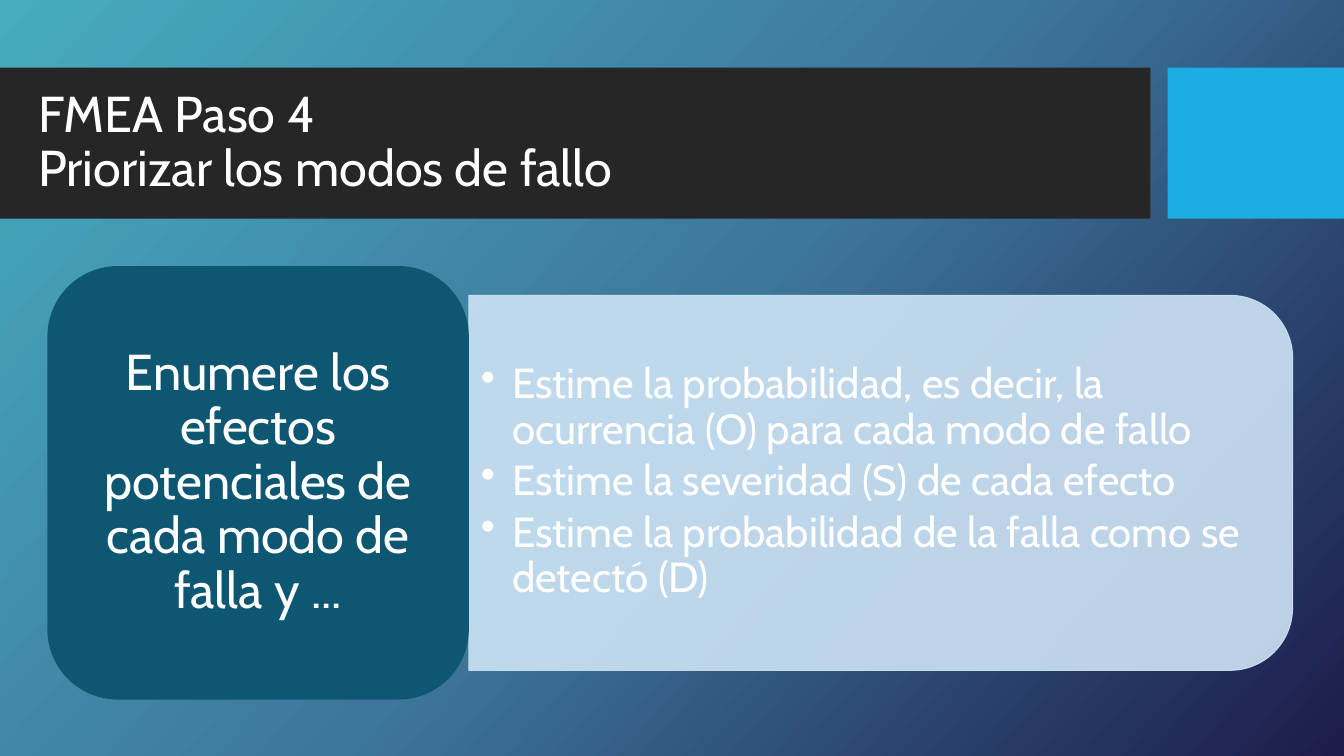
from lxml import etree
from pptx import Presentation
from pptx.dml.color import RGBColor
from pptx.enum.shapes import MSO_SHAPE
from pptx.enum.text import MSO_ANCHOR, MSO_AUTO_SIZE, PP_ALIGN
from pptx.oxml.ns import qn
from pptx.util import Inches, Pt

RECT, ROUND, TAB = MSO_SHAPE.RECTANGLE, MSO_SHAPE.ROUNDED_RECTANGLE, MSO_SHAPE.ROUND_2_SAME_RECTANGLE
LEFT, CENTER = PP_ALIGN.LEFT, PP_ALIGN.CENTER

TITLE = "FMEA Paso 4\vPriorizar los modos de fallo"
LEAD = "Enumere los efectos potenciales de cada modo de falla y ..."
STEPS = [
    "Estime la probabilidad, es decir, la ocurrencia (O) para cada modo de fallo",
    "Estime la severidad (S) de cada efecto",
    "Estime la probabilidad de la falla como se detectó (D)",
]
STOPS = [(0, "46ACBE"), (50, "3E779B"), (100, "1C1C4C")]
ANGLE = 42
WIDE, HIGH = 13.33, 7.5
BAND = (0.67, 1.5)
CARD = (0.47, 2.64, 4.18, 4.3)
PANEL = (CARD[0] + CARD[2], 2.93, 8.17, 3.72)


def color(code):
    return RGBColor.from_string(code)


def place(item, box):
    for name, size in zip(("left", "top", "width", "height"), box):
        setattr(item, name, Inches(size))


def block(kind, box, code):
    shape = slide.shapes.add_shape(kind, *map(Inches, box))
    shape.shadow.inherit = False
    shape.fill.solid()
    shape.fill.fore_color.rgb = color(code)
    shape.line.fill.background()
    return shape


def write(item, lines, size, align, pad, after=0, dots=False):
    frame = item.text_frame
    form = {"word_wrap": True, "auto_size": MSO_AUTO_SIZE.NONE, "vertical_anchor": MSO_ANCHOR.MIDDLE,
            "margin_left": Inches(pad[0]), "margin_right": Inches(pad[0]),
            "margin_top": Inches(pad[1]), "margin_bottom": Inches(pad[1])}
    for name, value in form.items():
        setattr(frame, name, value)
    for i, line in enumerate(lines):
        para = frame.add_paragraph() if i else frame.paragraphs[0]
        para.text = line
        look = {"alignment": align, "line_spacing": 0.9, "space_before": Pt(0), "space_after": Pt(after)}
        for name, value in look.items():
            setattr(para, name, value)
        if dots:
            props = para._p.get_or_add_pPr()
            props.set("marL", str(Inches(0.31)))
            props.set("indent", str(-Inches(0.31)))
            etree.SubElement(props, qn("a:buChar")).set("char", "•")
        for run in para.runs:
            for name, value in {"size": Pt(size), "name": "Cabin"}.items():
                setattr(run.font, name, value)
            run.font.color.rgb = color("FFFFFF")


deck = Presentation()
deck.slide_width, deck.slide_height = Inches(WIDE), Inches(HIGH)
slide = deck.slides.add_slide(deck.slide_layouts[5])

back = slide.background.fill
back.gradient()
back.gradient_angle = 360 - ANGLE
stops = next(slide.element.iter(qn("a:gsLst")))
for old in list(stops):
    stops.remove(old)
for share, code in STOPS:
    stop = etree.SubElement(stops, qn("a:gs"), pos=str(share * 1000))
    etree.SubElement(stop, qn("a:srgbClr"), val=code)

top, tall = BAND
block(RECT, (0, top, 11.41, tall), "262626")
block(RECT, (11.58, top, WIDE - 11.58, tall), "1CADE4")

title = slide.shapes.title
slide.shapes._spTree.append(title._element)
place(title, (0.28, 0.83, 10.51, 1.18))
write(title, [TITLE], 36, LEFT, (0.1, 0.05))

x, y, w, h = PANEL
panel = block(TAB, (x + (w - h) / 2, y + (h - w) / 2, h, w), "CDE3F5")
panel.rotation = 90
panel.line.color.rgb = color("CDE3F5")
panel.line.width = Pt(0.75)
for tint in panel._element.spPr.iter(qn("a:srgbClr")):
    etree.SubElement(tint, qn("a:alpha"), val="90000")

notes = slide.shapes.add_textbox(0, 0, 0, 0)
place(notes, (x, 3.11, 7.98, 3.35))
write(notes, STEPS, 30, LEFT, (0.12, 0.06), 4.5, True)

card = block(ROUND, CARD, "0E5772")
write(card, [LEAD], 36, CENTER, (0.15, 0.07))

deck.save("out.pptx")
